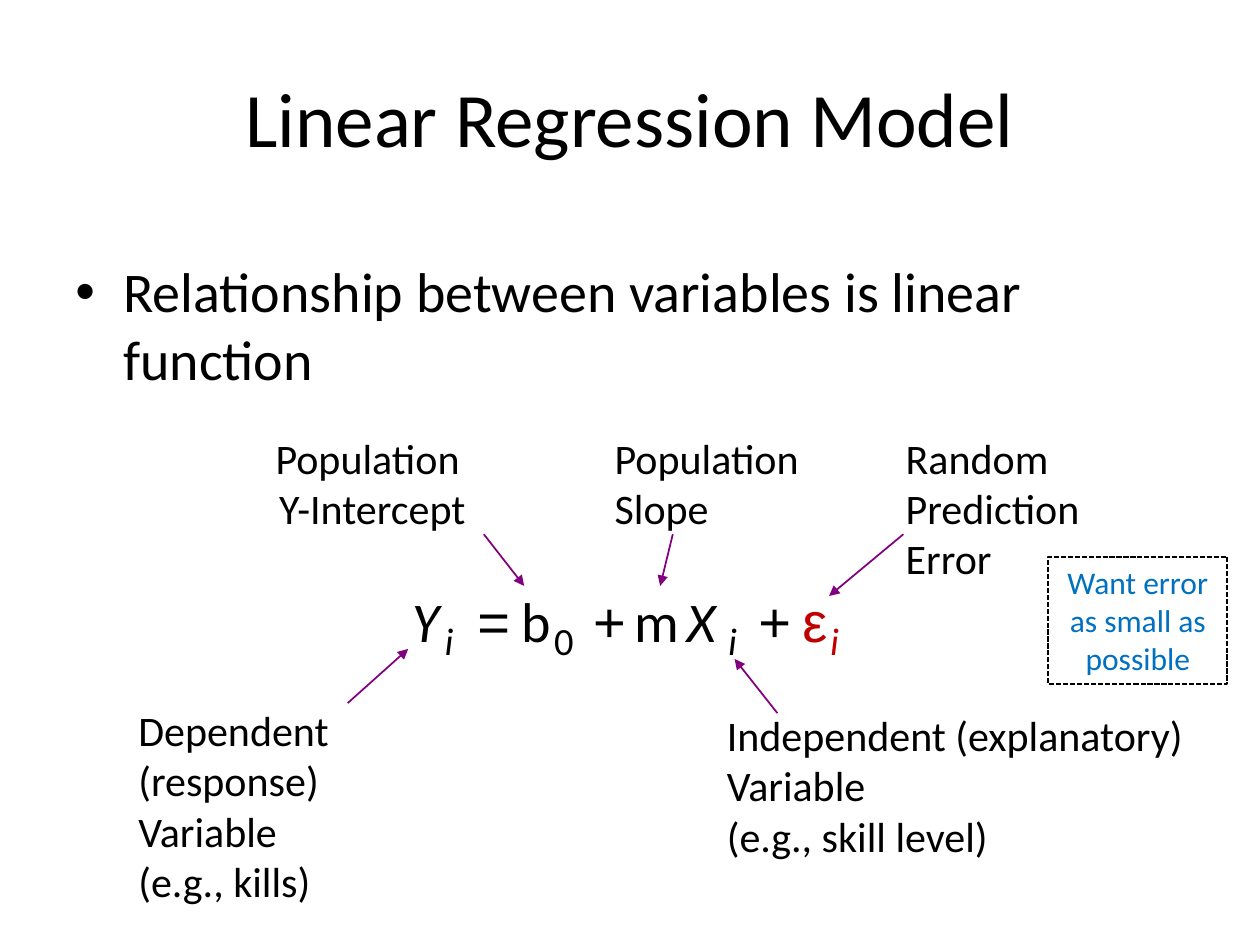
from lxml.etree import SubElement
from pptx import Presentation
from pptx.dml.color import RGBColor
from pptx.enum.dml import MSO_LINE
from pptx.enum.shapes import MSO_CONNECTOR, MSO_SHAPE
from pptx.enum.text import MSO_ANCHOR, MSO_AUTO_SIZE, PP_ALIGN
from pptx.oxml.ns import qn
from pptx.util import Inches, Pt

COLS, ROWS = 100, 75
CELL = Inches(10) / COLS
INK = {"text": "000000", "error": "C00000", "arrow": "800080", "note": "0070C0"}


def cells(*nums):
    """Turn grid cells into slide lengths."""
    return [round(n * CELL) for n in nums]


def paint(name):
    return RGBColor.from_string(INK[name])


def write(shape, text, size=24, font="Calibri", ink="text", italic=False,
          align=PP_ALIGN.LEFT, anchor=MSO_ANCHOR.TOP, wrap=True, grow=True):
    frame = shape.text_frame
    frame.word_wrap = wrap
    frame.vertical_anchor = anchor
    frame.auto_size = MSO_AUTO_SIZE.SHAPE_TO_FIT_TEXT if grow else MSO_AUTO_SIZE.NONE
    para = frame.paragraphs[0]
    para.text = text
    para.alignment = align
    for run in para.runs:
        run.font.size, run.font.name = Pt(size), font
        run.font.italic = italic
        run.font.color.rgb = paint(ink)
    return para


def label(slide, box, text, **form):
    return write(slide.shapes.add_textbox(*cells(*box)), text, **form)


def arrow(slide, start, end):
    line = slide.shapes.add_connector(MSO_CONNECTOR.STRAIGHT, *cells(*start, *end))
    line.line.color.rgb = paint("arrow")
    line.line.width = Pt(1)
    SubElement(line.line._get_or_add_ln(), qn("a:tailEnd"), type="triangle")
    SubElement(line._element.spPr, qn("a:effectLst"))


def title(slide, box):
    label(slide, box, "Linear Regression Model", size=44, grow=False,
          align=PP_ALIGN.CENTER, anchor=MSO_ANCHOR.MIDDLE)


def body(slide, box):
    para = label(slide, box, "Relationship between variables is linear function",
                 size=32, grow=False)
    props = para._p.get_or_add_pPr()
    dent = Inches(0.38)
    props.set("marL", str(dent))
    props.set("indent", str(-dent))
    SubElement(props, qn("a:buFont"), typeface="Arial")
    SubElement(props, qn("a:buChar"), char="•")


def model(slide, box):
    """Set the equation as full-size signs and lowered indices."""
    left, top, _, high = box
    drop, low = 2.4, 4.7
    signs = [("Y", 0, 4.3, "Calibri", "text"), ("=", 5.2, 4.5, "Arial", "text"),
             ("b", 8.7, 4.5, "Calibri", "text"), ("+", 14.4, 4.5, "Arial", "text"),
             ("m", 17.7, 5.6, "Calibri", "text"), ("X", 21.8, 4.5, "Calibri", "text"),
             ("+", 27.5, 4.5, "Arial", "text"), ("ε", 31, 4, "Arial", "error")]
    for sign, x, wide, font, ink in signs:
        label(slide, (left + x, top, wide, high), sign, size=32, font=font,
              ink=ink, italic=sign in "XY", wrap=False)
    marks = [("i", 2.6, 2.8, "text"), ("0", 11.3, 3.6, "text"),
             ("i", 25.1, 2.8, "text"), ("i", 33.2, 2.8, "error")]
    for mark, x, wide, ink in marks:
        label(slide, (left + x, top + drop, wide, low), mark, size=22,
              ink=ink, italic=mark == "i", wrap=False)


def terms(slide, box):
    """Name each part of the equation and point at it."""
    left, top, _, _ = box
    parts = [
        ("Population \vY-Intercept", (7.5, 0, 24.1, 9.1), PP_ALIGN.CENTER,
         (28.4, 8.6), (31.6, 12.7)),
        ("Population Slope", (37.8, 0, 19.7, 9.1), PP_ALIGN.LEFT,
         (43.4, 8.6), (42.4, 12.7)),
        ("Random Prediction Error", (60.9, 0, 17.4, 13.1), PP_ALIGN.LEFT,
         (61.7, 8.6), (55.8, 13.5)),
        ("Dependent (response) Variable\v(e.g., kills)", (0, 21.6, 24.1, 17.1),
         PP_ALIGN.LEFT, (17.6, 22), (22.4, 17.7)),
        ("Independent (explanatory) Variable \v(e.g., skill level)",
         (46.7, 22, 40.8, 13.1), PP_ALIGN.LEFT, (51.7, 22.8), (48.3, 18.5)),
    ]
    for text, (x, y, wide, high), align, start, end in parts:
        label(slide, (left + x, top + y, wide, high), text, align=align)
        arrow(slide, *((left + a, top + b) for a, b in (start, end)))


def note(slide, box):
    rect = slide.shapes.add_shape(MSO_SHAPE.RECTANGLE, *cells(*box))
    rect.shadow.inherit = False
    rect.fill.background()
    rect.line.color.rgb = paint("text")
    rect.line.width = Pt(1)
    rect.line.dash_style = MSO_LINE.SQUARE_DOT
    write(rect, "Want error as small as possible", size=18, ink="note",
          align=PP_ALIGN.CENTER)


def main():
    deck = Presentation()
    deck.slide_width, deck.slide_height = cells(COLS, ROWS)
    slide = deck.slides.add_slide(deck.slide_layouts[6])
    model(slide, (31.7, 46.1, 36, 6.4))
    title(slide, (5, 3, 90, 12.5))
    body(slide, (5, 19.9, 92.5, 46.1))
    terms(slide, (10, 33.8, 87.5, 38.7))
    note(slide, (83.2, 44.2, 14.2, 10.1))
    deck.save("out.pptx")


if __name__ == "__main__":
    main()
